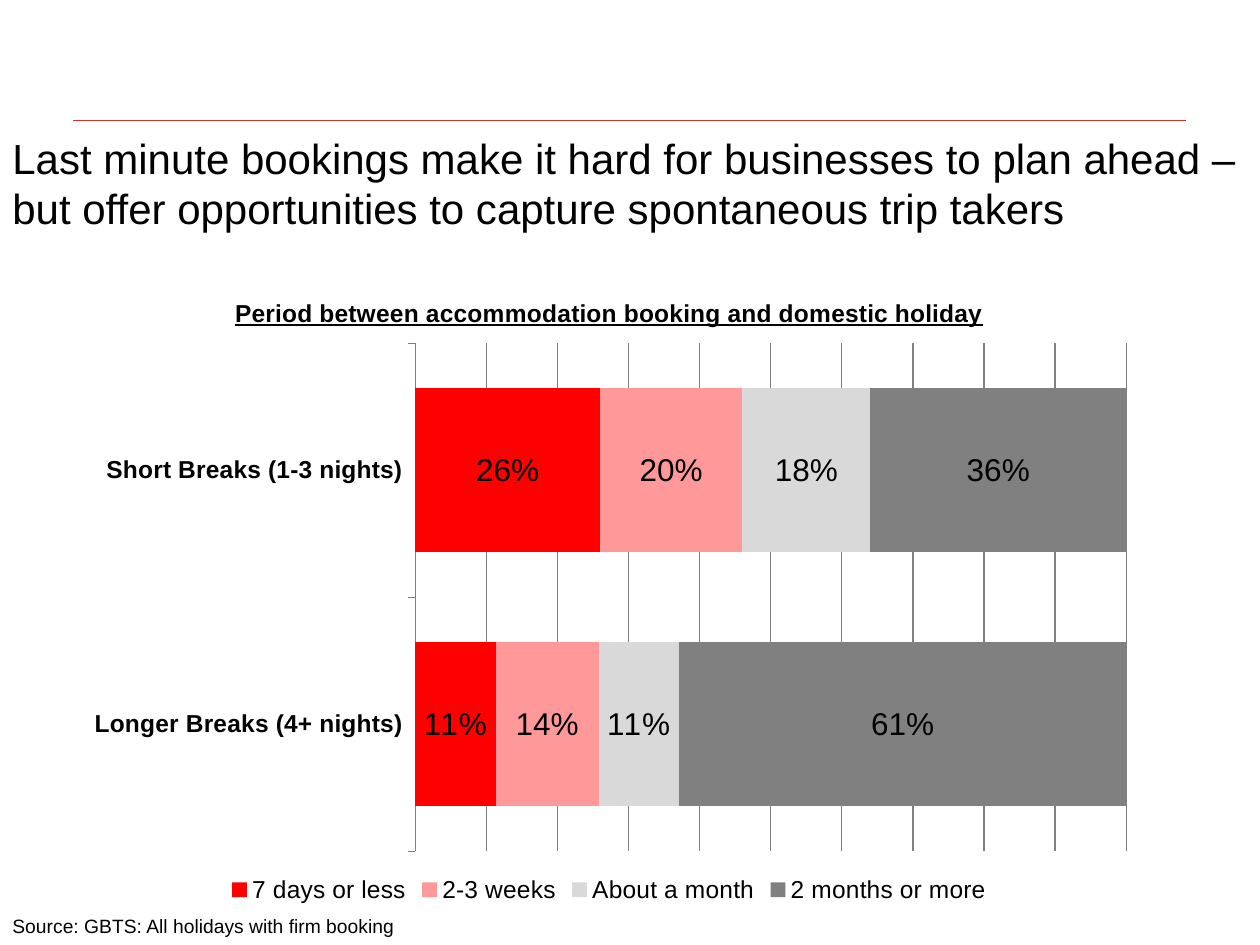
from dataclasses import dataclass

from lxml import etree
from pptx import Presentation
from pptx.chart.data import CategoryChartData
from pptx.dml.color import RGBColor
from pptx.enum.chart import XL_CHART_TYPE, XL_LABEL_POSITION, XL_LEGEND_POSITION, XL_TICK_MARK
from pptx.enum.shapes import MSO_CONNECTOR
from pptx.enum.text import MSO_ANCHOR
from pptx.oxml import parse_xml
from pptx.oxml.ns import nsdecls, qn
from pptx.util import Pt

STACKED_BAR = XL_CHART_TYPE.BAR_STACKED_100
LABEL_CENTER = XL_LABEL_POSITION.CENTER
LEGEND_BOTTOM = XL_LEGEND_POSITION.BOTTOM
TICK_OUT = XL_TICK_MARK.OUTSIDE
TICK_NONE = XL_TICK_MARK.NONE
STRAIGHT = MSO_CONNECTOR.STRAIGHT
TOP = MSO_ANCHOR.TOP


@dataclass(frozen=True)
class Theme:
    font: str = "Arial"
    text: str = "000000"
    rule: str = "CD3425"
    axis: str = "808080"
    title_size: float = 24
    label_size: float = 18
    chart_size: float = 14
    source_size: float = 11


@dataclass(frozen=True)
class Box:
    left: float
    top: float
    width: float
    height: float


@dataclass(frozen=True)
class BookingPeriod:
    name: str
    color: str
    shares: tuple[float, float]


THEME = Theme()
CATEGORIES = ("Longer Breaks (4+ nights)", "Short Breaks (1-3 nights)")
PERIODS = (
    BookingPeriod("7 days or less", "FF0000", (0.11, 0.26)),
    BookingPeriod("2-3 weeks", "FF9999", (0.14, 0.20)),
    BookingPeriod("About a month", "D9D9D9", (0.11, 0.18)),
    BookingPeriod("2 months or more", "808080", (0.61, 0.36)),
)


def rgb(value: str) -> RGBColor:
    return RGBColor.from_string(value)


def style_font(font, size: float, bold: bool = False) -> None:
    font.name = THEME.font
    font.size = Pt(size)
    font.bold = bold
    font.color.rgb = rgb(THEME.text)


def add_text(slide, box: Box, text: str, size: float) -> None:
    sp = slide.shapes.add_textbox(Pt(box.left), Pt(box.top), Pt(box.width), Pt(box.height))
    tf = sp.text_frame
    tf.word_wrap = True
    tf.vertical_anchor = TOP
    tf.text = text
    style_font(tf.paragraphs[0].runs[0].font, size)


def add_rule(slide, left: float, right: float, y: float) -> None:
    line = slide.shapes.add_connector(STRAIGHT, Pt(left), Pt(y), Pt(right), Pt(y))
    line.line.color.rgb = rgb(THEME.rule)
    line.line.width = Pt(0.75)
    etree.SubElement(line._element.spPr, qn("a:effectLst"))


def place_plot(chart, x: float, y: float, w: float, h: float) -> None:
    """Fix the inner plot area, in fractions of the chart."""
    area = chart._chartSpace.chart.plotArea
    for old in area.findall(qn("c:layout")):
        area.remove(old)
    sizes = "".join(f'<c:{k} val="{v}"/>' for k, v in zip("xywh", (x, y, w, h)))
    area.insert(0, parse_xml(
        f'<c:layout {nsdecls("c")}><c:manualLayout><c:layoutTarget val="inner"/>'
        f'<c:xMode val="edge"/><c:yMode val="edge"/>{sizes}</c:manualLayout></c:layout>'))


def style_axes(chart) -> None:
    cat = chart.category_axis
    cat.major_tick_mark = TICK_OUT
    cat.minor_tick_mark = TICK_NONE
    style_font(cat.tick_labels.font, THEME.chart_size, bold=True)
    val = chart.value_axis
    val.minimum_scale, val.maximum_scale, val.major_unit = 0, 1, 0.1
    val.has_major_gridlines = True
    val.visible = False
    for line in (cat.format.line, val.major_gridlines.format.line):
        line.color.rgb = rgb(THEME.axis)
        line.width = Pt(0.75)


def add_booking_chart(slide, box: Box, title: str) -> None:
    data = CategoryChartData(number_format="0%")
    data.categories = CATEGORIES
    for period in PERIODS:
        data.add_series(period.name, period.shares)
    chart = slide.shapes.add_chart(STACKED_BAR, Pt(box.left), Pt(box.top), Pt(box.width),
                                   Pt(box.height), data).chart
    style_font(chart.font, THEME.label_size)

    chart.has_title = True
    chart.chart_title.include_in_layout = False
    tf = chart.chart_title.text_frame
    tf.text = title
    r = tf.paragraphs[0].runs[0]
    style_font(r.font, THEME.chart_size, bold=True)
    r.font.underline = True

    chart.has_legend = True
    chart.legend.position = LEGEND_BOTTOM
    chart.legend.include_in_layout = False
    style_font(chart.legend.font, THEME.chart_size)

    plot = chart.plots[0]
    plot.gap_width, plot.overlap = 55, 100
    plot.vary_by_categories = False
    for series, period in zip(plot.series, PERIODS):
        series.format.fill.solid()
        series.format.fill.fore_color.rgb = rgb(period.color)
        labels = series.data_labels
        labels.show_value = True
        labels.number_format = "0%"
        labels.number_format_is_linked = False
        labels.position = LABEL_CENTER
        style_font(labels.font, THEME.label_size)
    style_axes(chart)
    place_plot(chart, 0.32, 0.11, 0.66, 0.8)


def main() -> None:
    prs = Presentation()
    prs.slide_width, prs.slide_height = Pt(720), Pt(540)
    slide = prs.slides.add_slide(prs.slide_layouts[6])
    add_rule(slide, 42, 678, 69)
    add_text(slide, Box(0, 72, 720, 43),
             "Last minute bookings make it hard for businesses to plan ahead – "
             "but offer opportunities to capture spontaneous trip takers", THEME.title_size)
    add_text(slide, Box(0, 519, 397.5, 34),
             "Source: GBTS: All holidays with firm booking", THEME.source_size)
    add_booking_chart(slide, Box(40.3, 156.2, 615.6, 363),
                      "Period between accommodation booking and domestic holiday")
    prs.save("out.pptx")


if __name__ == "__main__":
    main()
